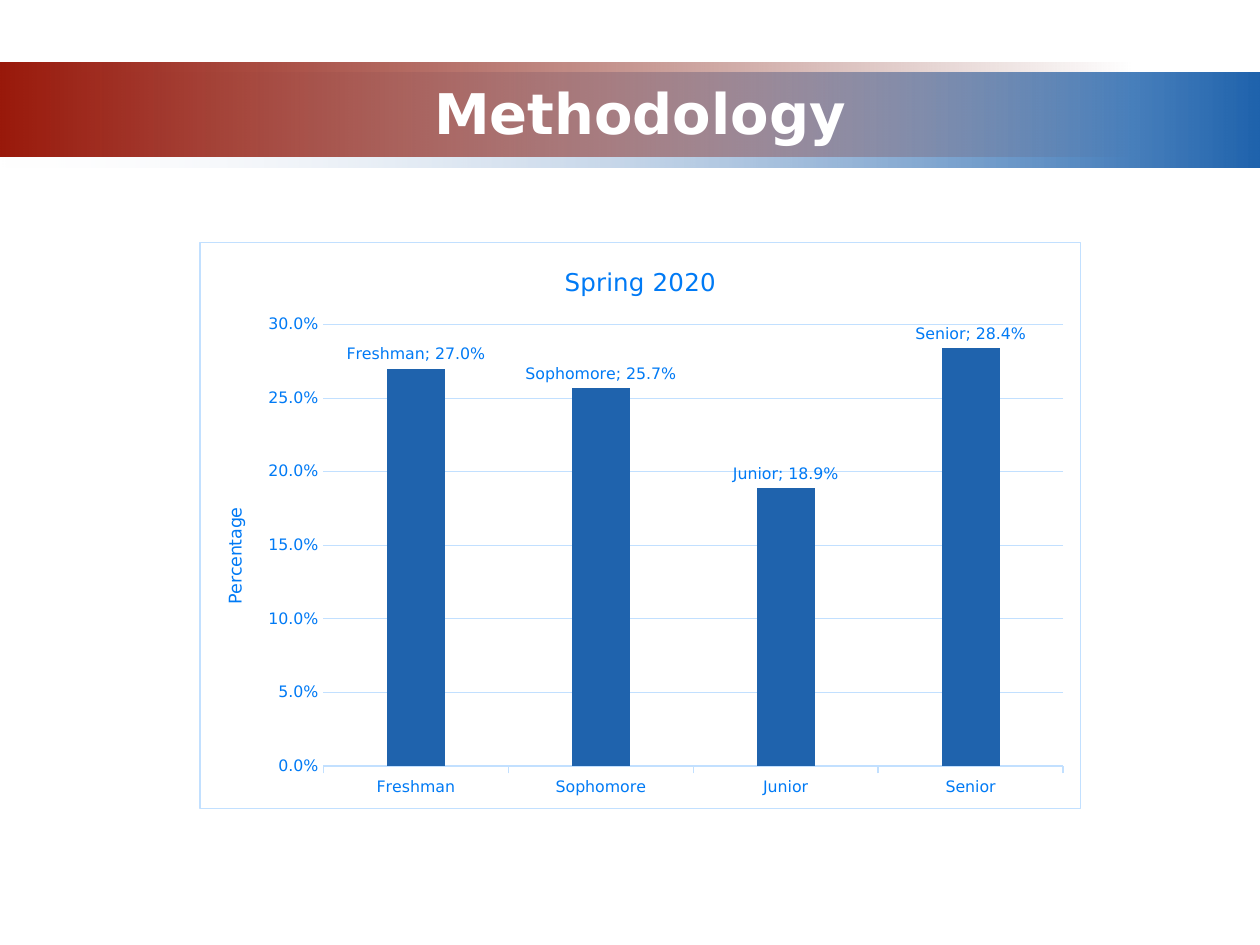
"""Build a Methodology slide with a gradient banner and a column chart of class years."""
import lxml.etree
import pptx
import pptx.chart.data
import pptx.dml.color
import pptx.enum.chart
import pptx.enum.shapes
import pptx.enum.text
import pptx.oxml
import pptx.oxml.ns
import pptx.util

Cm = pptx.util.Cm
Pt = pptx.util.Pt
RGB = pptx.dml.color.RGBColor
qn = pptx.oxml.ns.qn

WHITE = RGB(0xFF, 0xFF, 0xFF)
PALE = RGB(0xF1, 0xF2, 0xF7)
BLUE = RGB(0x1F, 0x63, 0xAD)
RED = RGB(0x99, 0x19, 0x0B)
DARK = RGB(0x6D, 0x12, 0x08)
TEXT = RGB(0x00, 0x7A, 0xF5)
GRID = RGB(0xC2, 0xE0, 0xFF)
FACE = "DejaVu Sans"

YEARS = {"Freshman": 0.27, "Sophomore": 0.257, "Junior": 0.189, "Senior": 0.284}
PLOT = {"x": 0.14, "y": 0.145, "w": 0.84, "h": 0.78}


def apply(target, values):
    for name, value in values.items():
        setattr(target, name, value)


def style(font, size, color=TEXT, bold=False):
    apply(font, {"name": FACE, "size": Pt(size), "bold": bold})
    font.color.rgb = color


def rule(line, color=GRID):
    line.color.rgb = color
    line.width = Pt(0.75)


def add_band(slide, top, width, colors, clear):
    band = slide.shapes.add_shape(
        pptx.enum.shapes.MSO_SHAPE.RECTANGLE, 0, Cm(top), Cm(width), Cm(1.9))
    band.shadow.inherit = False
    band.line.fill.background()
    band.fill.gradient()
    band.fill.gradient_angle = 0
    for stop, color, place in zip(band.fill.gradient_stops, colors, (0, 1)):
        stop.color.rgb = color
        stop.position = place
    tint = band.fill._xPr.findall(".//" + qn("a:srgbClr"))[clear]
    lxml.etree.SubElement(tint, qn("a:alpha"), val="0")


def add_title(slide, text):
    box = slide.shapes.add_textbox(Cm(-0.33), Cm(1.47), Cm(26.47), Cm(1.57))
    frame = box.text_frame
    apply(frame, {"word_wrap": True, "text": text,
                  "vertical_anchor": pptx.enum.text.MSO_ANCHOR.MIDDLE})
    line = frame.paragraphs[0]
    line.alignment = pptx.enum.text.PP_ALIGN.CENTER
    style(line.font, 32, WHITE, True)


def set_head(head, text, size):
    head.text_frame.text = text
    style(head.text_frame.paragraphs[0].runs[0].font, size)


def set_frame(chart):
    ns = pptx.oxml.ns.nsdecls("c", "a")
    chart._chartSpace.find(qn("c:chart")).addnext(pptx.oxml.parse_xml(
        f'<c:spPr {ns}><a:solidFill><a:srgbClr val="{WHITE}"/></a:solidFill>'
        f'<a:ln w="{Pt(0.75)}"><a:solidFill><a:srgbClr val="{GRID}"/>'
        '</a:solidFill></a:ln></c:spPr>'))
    area = chart._chartSpace.find(".//" + qn("c:plotArea"))
    for old in area.findall(qn("c:layout")):
        area.remove(old)
    parts = '<c:layoutTarget val="inner"/><c:xMode val="edge"/><c:yMode val="edge"/>'
    parts += "".join(f'<c:{key} val="{value}"/>' for key, value in PLOT.items())
    area.insert(0, pptx.oxml.parse_xml(
        f"<c:layout {ns}><c:manualLayout>{parts}</c:manualLayout></c:layout>"))


def set_axes(chart):
    marks = pptx.enum.chart.XL_TICK_MARK
    cat, val = chart.category_axis, chart.value_axis
    apply(cat, {"major_tick_mark": marks.OUTSIDE, "has_major_gridlines": False})
    apply(val, {"major_tick_mark": marks.NONE, "has_major_gridlines": True,
                "minimum_scale": 0, "maximum_scale": 0.3, "major_unit": 0.05})
    apply(val.tick_labels, {"number_format": "0.0%", "number_format_is_linked": False})
    for axis in (cat, val):
        style(axis.tick_labels.font, 9)
    rule(cat.format.line)
    rule(val.major_gridlines.format.line)
    val.format.line.fill.background()
    set_head(val.axis_title, "Percentage", 10)


def set_bars(plot):
    apply(plot, {"gap_width": 219, "overlap": -27, "vary_by_categories": False})
    bars = plot.series[0]
    bars.format.fill.solid()
    bars.format.fill.fore_color.rgb = BLUE
    tags = bars.data_labels
    apply(tags, {"show_value": True, "show_category_name": True,
                 "number_format": "0.0%", "number_format_is_linked": False,
                 "position": pptx.enum.chart.XL_LABEL_POSITION.OUTSIDE_END})
    style(tags.font, 9)
    split = lxml.etree.Element(qn("c:separator"))
    split.text = "; "
    tags._element.find(qn("c:showBubbleSize")).addnext(split)


def add_chart(slide):
    data = pptx.chart.data.CategoryChartData(number_format="0.0%")
    data.categories = list(YEARS)
    data.add_series("Series 1", list(YEARS.values()))
    chart = slide.shapes.add_chart(
        pptx.enum.chart.XL_CHART_TYPE.COLUMN_CLUSTERED,
        Cm(4.02), Cm(4.88), Cm(17.78), Cm(11.43), data).chart
    chart.has_legend = False
    style(chart.font, 10)
    set_head(chart.chart_title, "Spring 2020", 14)
    chart.chart_title.include_in_layout = False
    set_frame(chart)
    set_axes(chart)
    set_bars(chart.plots[0])


def main():
    deck = pptx.Presentation()
    apply(deck, {"slide_width": Cm(25.4), "slide_height": Cm(19.05)})
    slide = deck.slides.add_slide(deck.slide_layouts[6])
    add_band(slide, 1.47, 25.4, (PALE, BLUE), 0)
    add_band(slide, 1.26, 22.86, (RED, DARK), 1)
    add_title(slide, "Methodology")
    add_chart(slide)
    deck.save("out.pptx")


if __name__ == "__main__":
    main()
